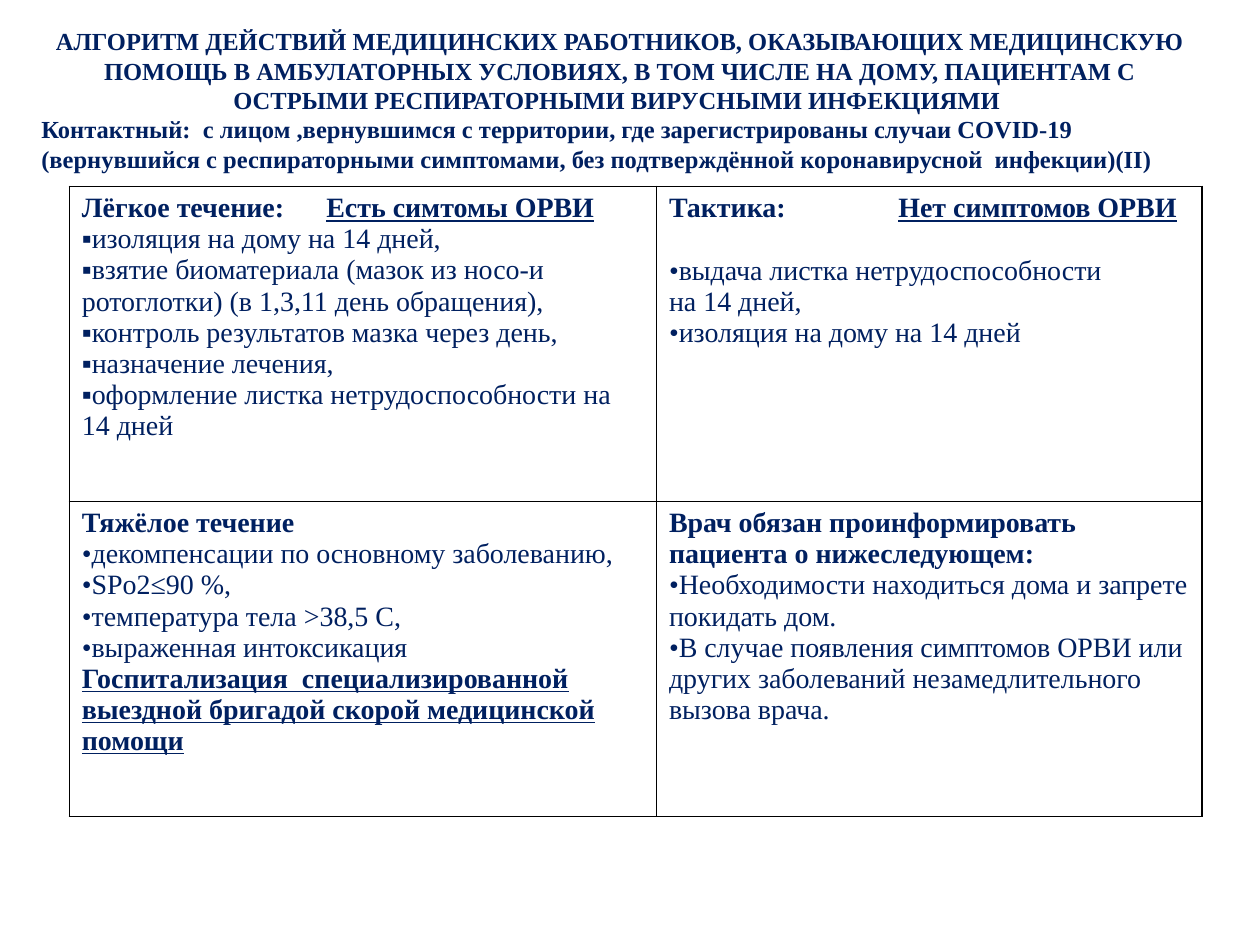
from lxml.etree import SubElement
from pptx import Presentation
from pptx.dml.color import RGBColor
from pptx.enum.text import MSO_AUTO_SIZE, PP_ALIGN
from pptx.oxml.ns import qn
from pptx.util import Inches, Pt

NAVY = RGBColor(0x00, 0x20, 0x60)
BLACK = RGBColor(0x00, 0x00, 0x00)
FONT = "Times New Roman"
SQUARE, DOT = "▪", "•"
BOLD = {"bold": True}
UNDERLINED = {"bold": True, "underline": True}

TITLE = [
    ("АЛГОРИТМ ДЕЙСТВИЙ МЕДИЦИНСКИХ РАБОТНИКОВ, ОКАЗЫВАЮЩИХ МЕДИЦИНСКУЮ "
     "ПОМОЩЬ В АМБУЛАТОРНЫХ УСЛОВИЯХ, В ТОМ ЧИСЛЕ НА ДОМУ, ПАЦИЕНТАМ С "
     "ОСТРЫМИ РЕСПИРАТОРНЫМИ ВИРУСНЫМИ ИНФЕКЦИЯМИ ",
     {"bold": True, "align": PP_ALIGN.CENTER}),
]
SUBTITLE = [
    ("Контактный:  с лицом ,вернувшимся с территории, где зарегистрированы случаи COVID-19", BOLD),
    ("(вернувшийся с респираторными симптомами, без подтверждённой "
     "коронавирусной  инфекции)(II)", BOLD),
]
MILD = [
    ("Лёгкое течение:", {"bold": True, "tab": 1.94, "tabbed": "Есть симтомы ОРВИ"}),
    ("изоляция на дому на 14 дней,", {"bullet": SQUARE}),
    ("взятие биоматериала (мазок из носо-и ротоглотки) (в 1,3,11 день обращения),",
     {"bullet": SQUARE}),
    ("контроль результатов мазка через день,", {"bullet": SQUARE}),
    ("назначение лечения,", {"bullet": SQUARE}),
    ("оформление листка нетрудоспособности на 14 дней", {"bullet": SQUARE}),
]
TACTICS = [
    ("Тактика:", {"bold": True, "tab": 1.82, "tabbed": "Нет симптомов ОРВИ"}),
    ("выдача листка нетрудоспособности", {"bullet": DOT, "before": 18}),
    ("на 14 дней,", {}),
    ("изоляция на дому на 14 дней", {"bullet": DOT}),
]
SEVERE = [
    ("Тяжёлое течение", BOLD),
    ("декомпенсации по основному заболеванию,", {"bullet": DOT}),
    ("SPo2≤90 %,", {"bullet": DOT}),
    ("температура тела >38,5 C,", {"bullet": DOT}),
    ("выраженная интоксикация", {"bullet": DOT}),
    ("Госпитализация  специализированной выездной бригадой скорой медицинской помощи",
     UNDERLINED),
]
DUTIES = [
    ("Врач обязан проинформировать  пациента о нижеследующем:", BOLD),
    ("Необходимости находиться дома и запрете покидать дом.", {"bullet": DOT}),
    ("В случае появления симптомов ОРВИ или других заболеваний незамедлительного вызова врача.",
     {"bullet": DOT}),
]
CELLS = [[MILD, TACTICS], [SEVERE, DUTIES]]
COLUMN_WIDTHS = [4.66, 4.33]
ROW_HEIGHT = 2.5


def add_run(paragraph, text, size, bold, underline):
    run = paragraph.add_run()
    run.text = text
    font = run.font
    font.name, font.size, font.bold, font.underline = FONT, Pt(size), bold, underline
    font.color.rgb = NAVY


def write_paragraph(paragraph, text, size, bold=False, underline=False, align=None,
                    bullet=None, before=None, tab=None, tabbed=None):
    """Write text; tabbed is an underlined phrase that starts at the tab stop."""
    properties = paragraph._p.get_or_add_pPr()
    if bullet:
        properties.set("marL", "0")
        properties.set("indent", "0")
        SubElement(properties, qn("a:buFont"), typeface=FONT)
        SubElement(properties, qn("a:buChar"), char=bullet)
    if tab:
        stops = SubElement(properties, qn("a:tabLst"))
        SubElement(stops, qn("a:tab"), pos=str(Inches(tab)), algn="l")
    if before:
        paragraph.space_before = Pt(before)
    paragraph.alignment = align
    add_run(paragraph, text + ("\t" if tabbed else ""), size, bold, underline)
    if tabbed:
        add_run(paragraph, tabbed, size, bold, True)


def write_text(frame, paragraphs, size):
    frame.word_wrap = True
    for index, (text, style) in enumerate(paragraphs):
        paragraph = frame.add_paragraph() if index else frame.paragraphs[0]
        write_paragraph(paragraph, text, size, **style)


def add_text_box(slide, paragraphs, left, top, width, height):
    box = slide.shapes.add_textbox(Inches(left), Inches(top), Inches(width), Inches(height))
    write_text(box.text_frame, paragraphs, size=14)
    box.text_frame.auto_size = MSO_AUTO_SIZE.SHAPE_TO_FIT_TEXT


def set_borders(cell):
    properties = cell._tc.get_or_add_tcPr()
    for side in ("lnL", "lnR", "lnT", "lnB"):
        line = SubElement(properties, qn(f"a:{side}"), w=str(Pt(1)))
        fill = SubElement(line, qn("a:solidFill"))
        SubElement(fill, qn("a:srgbClr"), val=str(BLACK))


def add_care_table(slide):
    frame = slide.shapes.add_table(
        len(CELLS), len(COLUMN_WIDTHS), Inches(0.55), Inches(1.48),
        Inches(sum(COLUMN_WIDTHS)), Inches(ROW_HEIGHT * len(CELLS)))
    table = frame.table
    table.first_row = table.horz_banding = False
    for column, width in zip(table.columns, COLUMN_WIDTHS):
        column.width = Inches(width)
    for row, contents in zip(table.rows, CELLS):
        row.height = Inches(ROW_HEIGHT)
        for cell, paragraphs in zip(row.cells, contents):
            set_borders(cell)
            cell.fill.background()
            write_text(cell.text_frame, paragraphs, size=16)


def main():
    presentation = Presentation()
    presentation.slide_width, presentation.slide_height = Inches(10), Inches(7.5)
    slide = presentation.slides.add_slide(presentation.slide_layouts[6])
    add_care_table(slide)
    add_text_box(slide, TITLE, 0.23, 0.16, 9.38, 0.81)
    add_text_box(slide, SUBTITLE, 0.23, 0.86, 10, 0.57)
    presentation.save("out.pptx")


if __name__ == "__main__":
    main()
